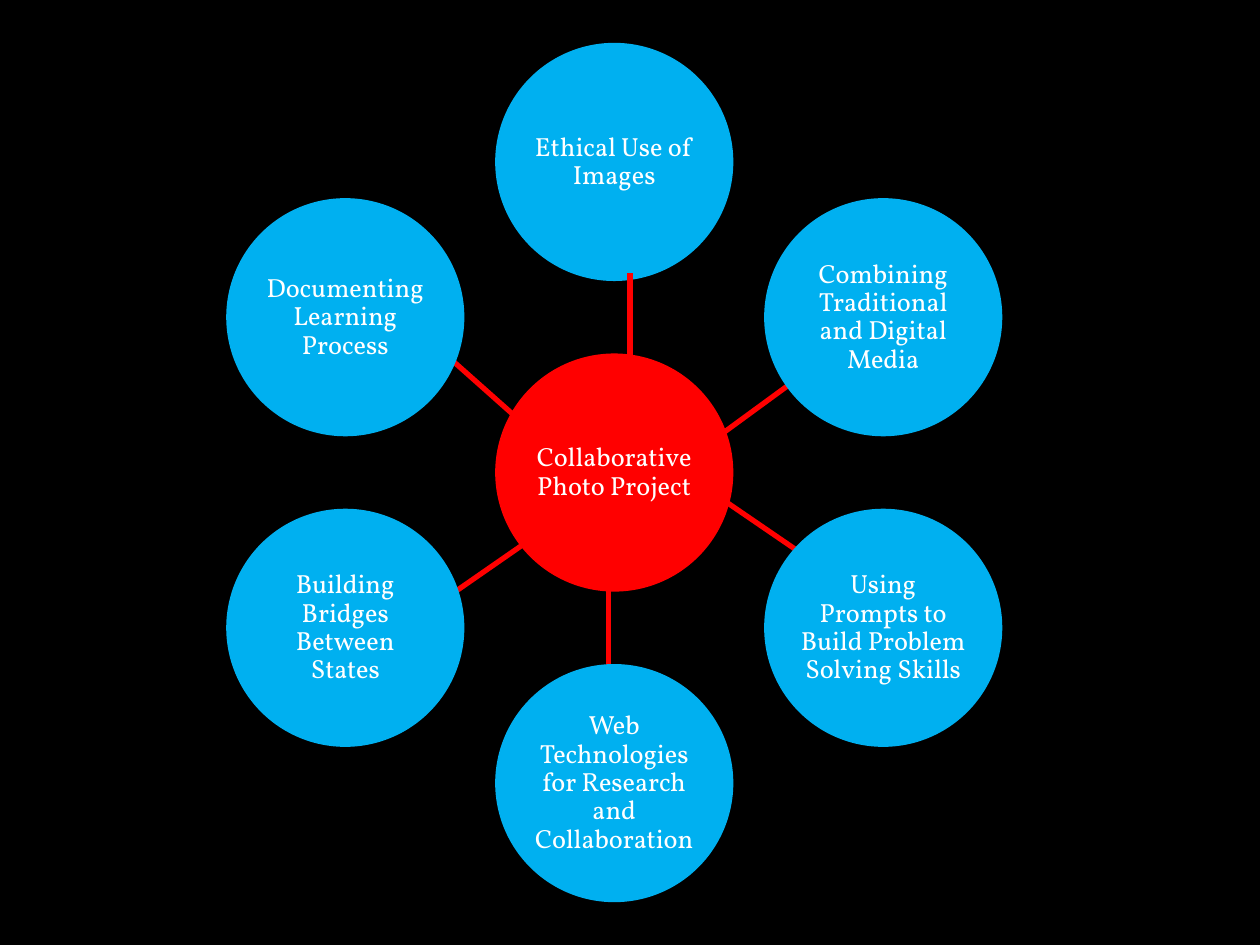
from math import cos, radians, sin

from lxml.etree import SubElement
from pptx import Presentation
from pptx.dml.color import RGBColor
from pptx.enum.shapes import MSO_CONNECTOR, MSO_SHAPE
from pptx.enum.text import MSO_ANCHOR, PP_ALIGN
from pptx.oxml.ns import qn
from pptx.util import Inches, Pt

BLACK = RGBColor(0x00, 0x00, 0x00)
RED = RGBColor(0xFF, 0x00, 0x00)
BLUE = RGBColor(0x00, 0xB0, 0xF0)
WHITE = RGBColor(0xFF, 0xFF, 0xFF)

HUB_X, HUB_Y = 4.875, 3.75
DIAMETER = 1.89
ORBIT = 2.465
INSET = Inches(0.01)

FRAME_FORMAT = {
    "word_wrap": True,
    "vertical_anchor": MSO_ANCHOR.MIDDLE,
    "margin_left": INSET,
    "margin_top": INSET,
    "margin_right": INSET,
    "margin_bottom": INSET,
}
PARAGRAPH_FORMAT = {"alignment": PP_ALIGN.CENTER, "line_spacing": 0.9}
FONT_FORMAT = {"name": "Vollkorn", "size": Pt(15)}

HUB_TOPIC = "Collaborative Photo Project"
# Clockwise from the top
TOPICS = [
    "Ethical Use of Images",
    "Combining Traditional and Digital Media",
    "Using\vPrompts to Build Problem Solving Skills",
    "Web Technologies for Research and Collaboration",
    "Building Bridges Between States",
    "Documenting Learning Process",
]
SPOKES_BEHIND = [
    ((4.5, 3.67), (3.42, 2.71)),
    ((5.42, 3.67), (6.5, 2.88)),
    ((3.42, 4.83), (4.5, 4.08)),
    ((4.83, 5.58), (4.83, 4.5)),
    ((5.67, 3.92), (7, 4.83)),
]
TOP_SPOKE = ((5, 3.25), (5, 2.17))


def apply_format(target, values):
    for name, value in values.items():
        setattr(target, name, value)


def add_spoke(slide, start, end):
    spoke = slide.shapes.add_connector(
        MSO_CONNECTOR.STRAIGHT, *(Inches(v) for v in (*start, *end)))
    spoke.line.color.rgb = RED
    spoke.line.width = Pt(3)
    SubElement(spoke._element.spPr, qn("a:effectLst"))


def add_topic(slide, topic, center_x, center_y, color):
    circle = slide.shapes.add_shape(
        MSO_SHAPE.OVAL,
        Inches(center_x - DIAMETER / 2), Inches(center_y - DIAMETER / 2),
        Inches(DIAMETER), Inches(DIAMETER))
    circle.shadow.inherit = False
    circle.fill.solid()
    circle.fill.fore_color.rgb = color
    circle.line.fill.background()

    frame = circle.text_frame
    frame.text = topic
    paragraph = frame.paragraphs[0]
    apply_format(frame, FRAME_FORMAT)
    apply_format(paragraph, PARAGRAPH_FORMAT)
    apply_format(paragraph.font, FONT_FORMAT)
    paragraph.font.color.rgb = WHITE


def add_orbit(slide):
    """Space the outer topics evenly around the hub."""
    for index, topic in enumerate(TOPICS):
        angle = radians(index * 360 / len(TOPICS))
        add_topic(slide, topic, HUB_X + ORBIT * sin(angle),
                  HUB_Y - ORBIT * cos(angle), BLUE)


def main():
    prs = Presentation()
    prs.slide_width, prs.slide_height = Inches(10), Inches(7.5)
    slide = prs.slides.add_slide(prs.slide_layouts[6])
    slide.background.fill.solid()
    slide.background.fill.fore_color.rgb = BLACK

    for start, end in SPOKES_BEHIND:
        add_spoke(slide, start, end)
    add_topic(slide, HUB_TOPIC, HUB_X, HUB_Y, RED)
    add_orbit(slide)
    add_spoke(slide, *TOP_SPOKE)

    prs.save("out.pptx")


if __name__ == "__main__":
    main()
